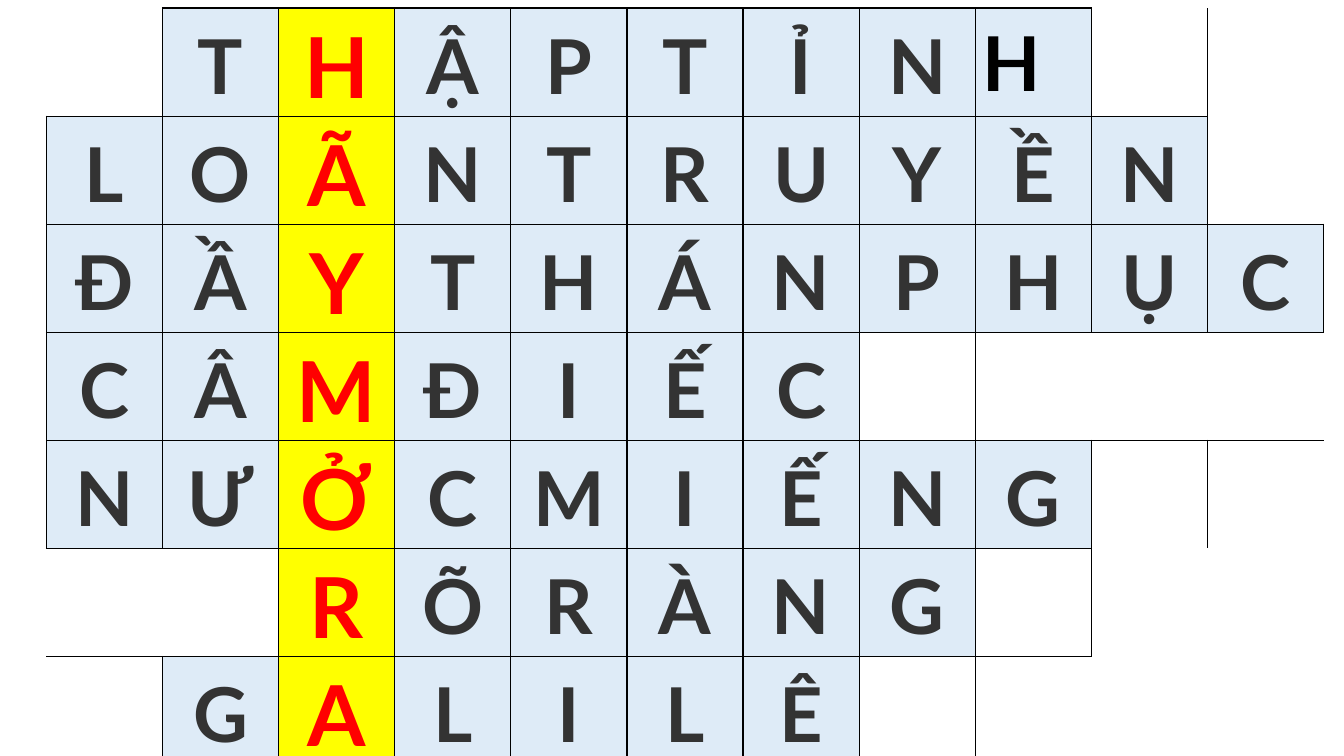
from lxml import etree
from pptx import Presentation
from pptx.dml.color import RGBColor
from pptx.enum.text import MSO_ANCHOR, PP_ALIGN
from pptx.oxml.ns import qn
from pptx.util import Inches, Pt

MIDDLE = MSO_ANCHOR.MIDDLE
CENTER = PP_ALIGN.CENTER
LEFT = PP_ALIGN.LEFT
BLANK_LAYOUT = 6
NO_STYLE = "{2D5ABB26-0587-4C30-8999-92F81FD0307C}"

COLORS = {
    "letter": "333333",
    "key_letter": "FF0000",
    "last_letter": "000000",
    "cell": "DEEBF7",
    "key_cell": "FFFF00",
    "line": "000000",
}

# Each answer with the column of its first letter
ANSWERS = [
    (1, "THẬPTỈNH"),
    (0, "LOÃNTRUYỀN"),
    (0, "ĐẦYTHÁNPHỤC"),
    (0, "CÂMĐIẾC"),
    (0, "NƯỞCMIẾNG"),
    (2, "RÕRÀNG"),
    (1, "GALILÊ"),
]
COLUMNS = 11
KEY_COLUMN = 2
LEFT_ALIGNED = (0, 8)
SIDES = {"lnL": (0, -1), "lnR": (0, 1), "lnT": (-1, 0), "lnB": (1, 0)}


class CrosswordSlide:
    font = "Lato"

    def __init__(self, deck):
        self.page = deck.slides.add_slide(deck.slide_layouts[BLANK_LAYOUT])

    def add_grid(self, left, top, width, height, letters):
        rows = len(letters)
        frame = self.page.shapes.add_table(
            rows, COLUMNS, Inches(left), Inches(top), Inches(width), Inches(height))
        table = frame.table
        table.first_row = False
        table.horz_banding = False
        table._tbl.tblPr.find(qn("a:tableStyleId")).text = NO_STYLE
        for row in range(rows):
            for column in range(COLUMNS):
                cell = table.cell(row, column)
                letter = letters[row].get(column)
                # A line stands on every side that touches a letter
                for side, (down, across) in SIDES.items():
                    beside = row + down
                    if letter or (0 <= beside < rows
                                  and column + across in letters[beside]):
                        self.add_border(cell, side)
                if letter:
                    self.fill_cell(cell, letter, row, column)
                else:
                    cell.fill.background()

    def add_border(self, cell, side):
        properties = cell._tc.get_or_add_tcPr()
        line = etree.SubElement(properties, qn(f"a:{side}"), w=str(Pt(1)))
        fill = etree.SubElement(line, qn("a:solidFill"))
        etree.SubElement(fill, qn("a:srgbClr"), val=COLORS["line"])

    def fill_cell(self, cell, letter, row, column):
        is_key = column == KEY_COLUMN
        is_left = (row, column) == LEFT_ALIGNED
        cell.fill.solid()
        cell.fill.fore_color.rgb = RGBColor.from_string(
            COLORS["key_cell" if is_key else "cell"])
        cell.vertical_anchor = MIDDLE
        cell.margin_left = cell.margin_right = Inches(0.07)
        cell.margin_top = cell.margin_bottom = 0

        para = cell.text_frame.paragraphs[0]
        para.alignment = LEFT if is_left else CENTER
        if not is_left:
            para.line_spacing = 1.07
            para.space_after = Pt(8)
        color = "key_letter" if is_key else "last_letter" if is_left else "letter"
        self.add_span(para, letter, 60 if is_key else 54, color)

    def add_span(self, para, text, size, color):
        span = para.add_run()
        span.text = text
        span.font.name = self.font
        span.font.size = Pt(size)
        span.font.bold = True
        span.font.color.rgb = RGBColor.from_string(COLORS[color])


def main():
    deck = Presentation()
    deck.slide_width = Inches(13.33)
    deck.slide_height = Inches(7.5)

    # Crossword grid
    letters = [dict(enumerate(word, start)) for start, word in ANSWERS]
    CrosswordSlide(deck).add_grid(0.46, 0.08, 12.67, 7.42, letters)

    deck.save("out.pptx")


if __name__ == "__main__":
    main()
